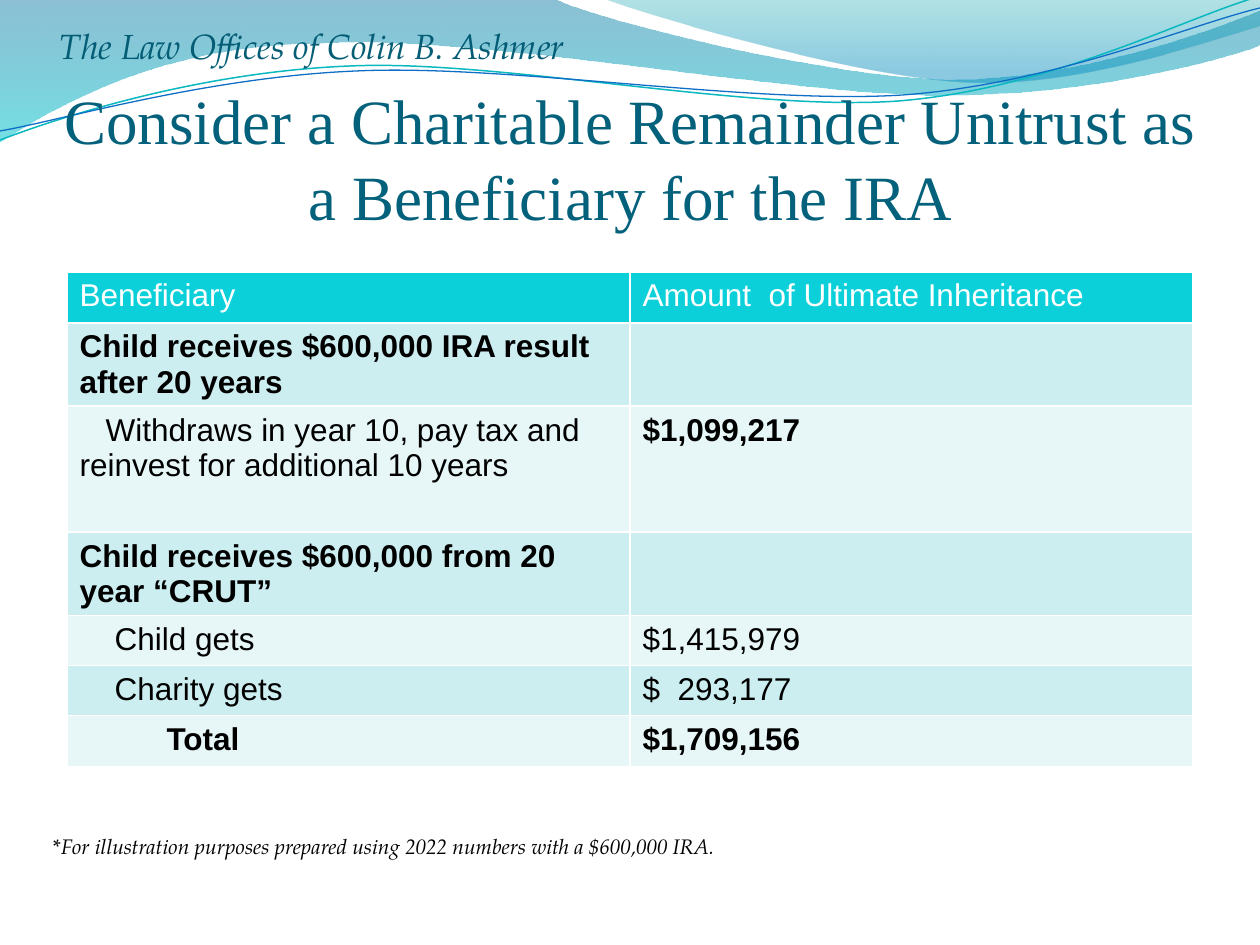
"""Build the slide comparing a charitable remainder unitrust with an inherited IRA."""
from lxml import etree
from pptx import Presentation
from pptx import util as u
from pptx.dml.color import RGBColor
from pptx.enum import text
from pptx.oxml.ns import qn

PX = 914400 / 126

WHITE = RGBColor(0xFF, 0xFF, 0xFF)
BLACK = RGBColor(0, 0, 0)
TITLE = RGBColor(0x04, 0x61, 0x7B)
FIRM = RGBColor(0x04, 0x5D, 0x75)
HEADER = RGBColor(0x0B, 0xD0, 0xD9)
BANDS = (RGBColor(0xE7, 0xF7, 0xF8), RGBColor(0xCC, 0xEE, 0xF1))
TEAL = RGBColor(0x0A, 0xB8, 0xBF)
BLUE = RGBColor(0x0F, 0x6F, 0xC6)
DEEP_BLUE = RGBColor(0x00, 0x74, 0xA1)
CYAN = RGBColor(0x00, 0xC6, 0xCF)
SEA = RGBColor(0x00, 0xA1, 0xA9)
SKY = RGBColor(0x00, 0x8B, 0xBF)

SERIF = "TeX Gyre Pagella"
TITLE_TEXT = "Consider a Charitable Remainder Unitrust as a Beneficiary for the IRA"
FIRM_TEXT = "The Law Offices of Colin B. Ashmer"
NOTE_TEXT = "*For illustration purposes prepared using 2022 numbers with a $600,000 IRA."

TITLE_FORMAT = dict(size=u.Pt(36), name="Times New Roman", bold=False)
FIRM_FORMAT = dict(size=u.Pt(20), name=SERIF, italic=True)
NOTE_FORMAT = dict(size=u.Pt(12), name=SERIF, italic=True)

WAVES = [
    ((0, -1), [((554, -1),), ((600, 21), (837, 79), (955, 79)),
               ((1073, 79), (1207, 33), (1260, 11)), ((1261, 45),),
               ((1239, 55), (1096, 96), (940, 95)), ((784, 95), (481, 35), (324, 43)),
               ((162, 44), (58, 105), (-1, 142))],
     [(0, DEEP_BLUE, 45), (1, CYAN, 55)]),
    ((604, -1), [((641, 14), (859, 78), (969, 82)),
                 ((1079, 87), (1211, 40), (1260, 26)), ((1260, 0),)],
     [(0, SEA, 30), (0.8, SKY, 45)]),
]
STROKES = [
    ((0, 140), [((60, 117), (199, 72), (349, 66)), ((498, 59), (747, 112), (898, 101)),
                ((1050, 89), (1182, 19), (1257, -3))], TEAL, 0.85),
    ((0, 131), [((59, 121), (207, 77), (357, 71)), ((508, 64), (752, 105), (903, 95)),
                ((1053, 84), (1186, 26), (1260, 8))], BLUE, 0.75),
]

ROWS = [
    (51, 0, "Beneficiary", False, "Amount  of Ultimate Inheritance", False),
    (83, 0, "Child receives $600,000 IRA result after 20 years", True, "", False),
    (126, 26, "Withdraws in year 10, pay tax and reinvest for additional 10 years", False,
     "$1,099,217", True),
    (83, 0, "Child receives $600,000 from 20 year “CRUT”", True, "", False),
    (50, 35, "Child gets", False, "$1,415,979", False),
    (50, 35, "Charity gets", False, "$  293,177", False),
    (51, 87, "Total", True, "$1,709,156", True),
]


def px(*values):
    return [u.Emu(round(value * PX)) for value in values]


def style(font, color, values):
    for name, value in values.items():
        setattr(font, name, value)
    font.color.rgb = color


def draw(page, start, steps, close):
    builder = page.shapes.build_freeform(*px(*start))
    builder.add_line_segments([px(*point) for step in steps for point in step], close=close)
    shape = builder.convert_to_shape()
    shape.shadow.inherit = False
    nodes = iter(list(shape.element.iter(qn("a:lnTo"))))
    for step in steps:
        first, *others = [next(nodes) for point in step]
        if others:
            first.tag = qn("a:cubicBezTo")
        for node in others:
            first.append(node[0])
            node.getparent().remove(node)
    return shape


def add_waves(page):
    for start, steps, stops in WAVES:
        shape = draw(page, start, steps, True)
        shape.line.fill.background()
        shape.fill.gradient()
        shape.fill.gradient_angle = 270
        for stop, (position, color, alpha) in zip(shape.fill.gradient_stops, stops):
            stop.position = position
            stop.color.rgb = color
        colors = shape.element.spPr.iter(qn("a:srgbClr"))
        for node, (position, color, alpha) in zip(colors, stops):
            etree.SubElement(node, qn("a:alpha"), val=str(alpha * 1000))
    for start, steps, color, width in STROKES:
        shape = draw(page, start, steps, False)
        shape.fill.background()
        shape.line.color.rgb = color
        shape.line.width = u.Pt(width)


def fill_box(box, area, words, color, values, margin_top=0,
             anchor=text.MSO_ANCHOR.BOTTOM, align=text.PP_ALIGN.LEFT):
    box.left, box.top, box.width, box.height = px(*area)
    frame = box.text_frame
    settings = dict(word_wrap=True, auto_size=text.MSO_AUTO_SIZE.NONE, vertical_anchor=anchor,
                    margin_left=0, margin_right=0, margin_bottom=0, margin_top=margin_top)
    for name, value in settings.items():
        setattr(frame, name, value)
    para = frame.paragraphs[0]
    para.alignment = align
    span = para.add_run()
    span.text = words
    style(span.font, color, values)
    return para


def border(cell):
    properties = cell._tc.get_or_add_tcPr()
    for side in "LRTB":
        line = etree.SubElement(properties, qn(f"a:ln{side}"), w=str(u.Pt(1)))
        solid = etree.SubElement(line, qn("a:solidFill"))
        etree.SubElement(solid, qn("a:srgbClr"), val=str(WHITE))


def add_inheritance_table(page):
    area = px(67, 272, 1126, sum(row[0] for row in ROWS))
    table = page.shapes.add_table(len(ROWS), 2, *area).table
    for index, (height, indent, label, label_bold, amount, amount_bold) in enumerate(ROWS):
        table.rows[index].height = px(height)[0]
        cells = [(label, label_bold, indent), (amount, amount_bold, 0)]
        for column, (words, bold, first) in enumerate(cells):
            cell = table.cell(index, column)
            border(cell)
            cell.fill.solid()
            cell.fill.fore_color.rgb = BANDS[index % 2] if index else HEADER
            para = cell.text_frame.paragraphs[0]
            if first:
                para._p.get_or_add_pPr().set("indent", str(px(first)[0]))
            if words:
                span = para.add_run()
                span.text = words
                style(span.font, BLACK if index else WHITE,
                      dict(size=u.Pt(18), name="Arial", bold=bold))


def main():
    deck = Presentation()
    deck.slide_width, deck.slide_height = u.Inches(10), u.Inches(7.5)
    page = deck.slides.add_slide(deck.slide_layouts[1])
    title, note = page.placeholders
    add_waves(page)
    for box in (note, title):
        page.shapes.element.append(box.element)

    para = fill_box(note, (53, 834, 1100, 30), NOTE_TEXT, BLACK, NOTE_FORMAT,
                    anchor=text.MSO_ANCHOR.TOP)
    para.space_before = u.Pt(0)
    properties = para._p.get_or_add_pPr()
    properties.set("marL", "0")
    properties.set("indent", "0")
    etree.SubElement(properties, qn("a:buNone"))

    firm = page.shapes.add_textbox(0, 0, 0, 0)
    fill_box(firm, (60, 7, 590, 60), FIRM_TEXT, FIRM, FIRM_FORMAT)
    fill_box(title, (53, 136, 1155, 97), TITLE_TEXT, TITLE, TITLE_FORMAT,
             margin_top=px(6)[0], align=text.PP_ALIGN.CENTER)
    add_inheritance_table(page)
    deck.save("out.pptx")


if __name__ == "__main__":
    main()
